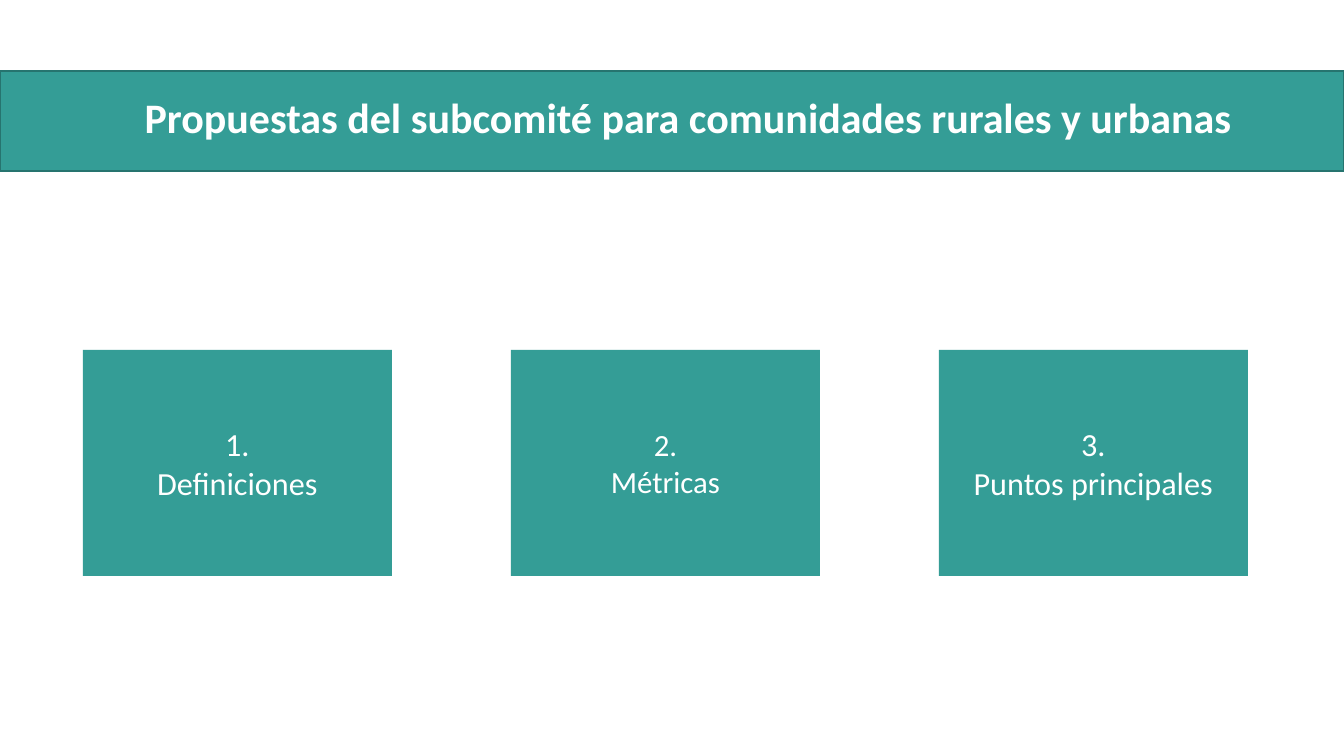
"""Build the slide that lists the subcommittee's three proposal areas."""
from dataclasses import dataclass

from pptx import Presentation
from pptx.dml.color import RGBColor
from pptx.enum.shapes import MSO_SHAPE as Shape
from pptx.enum.text import MSO_ANCHOR as Anchor, MSO_AUTO_SIZE as AutoSize, PP_ALIGN as Align
from pptx.util import Pt

TITLE = "Propuestas del subcomité para comunidades rurales y urbanas"
CARDS = [
    (("1.", "Definiciones"), 23),
    (("2.", "Métricas"), 22),
    (("3.", "Puntos principales"), 23),
]

PX = 914400 / 100.8
PAGE_SIZE = (1344, 756)
BANNER_BOX = (0, 71, 1344, 100)
TITLE_BOX = (90, 86, 1197, 61)
CARD_LEFT, CARD_TOP, CARD_WIDTH, CARD_HEIGHT = 83, 350, 309, 226
CARD_GAP = 119


@dataclass(frozen=True)
class Theme:
    font: str = "Calibri"
    teal: RGBColor = RGBColor.from_string("349D96")
    edge: RGBColor = RGBColor.from_string("26746F")
    white: RGBColor = RGBColor.from_string("FFFFFF")
    title_size: int = 30
    edge_width: int = 1


THEME = Theme()


def emu(lengths):
    return [round(length * PX) for length in lengths]


def write(box, lines, size, bold=False, anchor=Anchor.MIDDLE):
    frame = box.text_frame
    frame.word_wrap = True
    frame.auto_size = AutoSize.NONE
    frame.vertical_anchor = anchor
    for index, line in enumerate(lines):
        para = frame.add_paragraph() if index else frame.paragraphs[0]
        para.alignment = Align.CENTER
        para.line_spacing = 1.0
        para.space_before = para.space_after = Pt(0)
        span = para.add_run()
        span.text = line
        span.font.name = THEME.font
        span.font.size = Pt(size)
        span.font.bold = bold
        span.font.color.rgb = THEME.white


def add_block(page, bounds, edge=None):
    block = page.shapes.add_shape(Shape.RECTANGLE, *emu(bounds))
    block.shadow.inherit = False
    block.fill.solid()
    block.fill.fore_color.rgb = THEME.teal
    if edge is None:
        block.line.fill.background()
    else:
        block.line.color.rgb = edge
        block.line.width = Pt(THEME.edge_width)
    return block


def add_header(page):
    banner = add_block(page, BANNER_BOX, edge=THEME.edge)
    title = page.shapes.title
    title.element.addprevious(banner.element)
    title.left, title.top, title.width, title.height = emu(TITLE_BOX)
    write(title, [TITLE], THEME.title_size, bold=True, anchor=Anchor.TOP)


def add_cards(page):
    for index, (lines, size) in enumerate(CARDS):
        left = CARD_LEFT + index * (CARD_WIDTH + CARD_GAP)
        card = add_block(page, (left, CARD_TOP, CARD_WIDTH, CARD_HEIGHT))
        write(card, lines, size)


def main():
    deck = Presentation()
    deck.slide_width, deck.slide_height = emu(PAGE_SIZE)
    page = deck.slides.add_slide(deck.slide_layouts.get_by_name("Title Only"))
    add_header(page)
    add_cards(page)
    deck.save("out.pptx")


if __name__ == "__main__":
    main()
